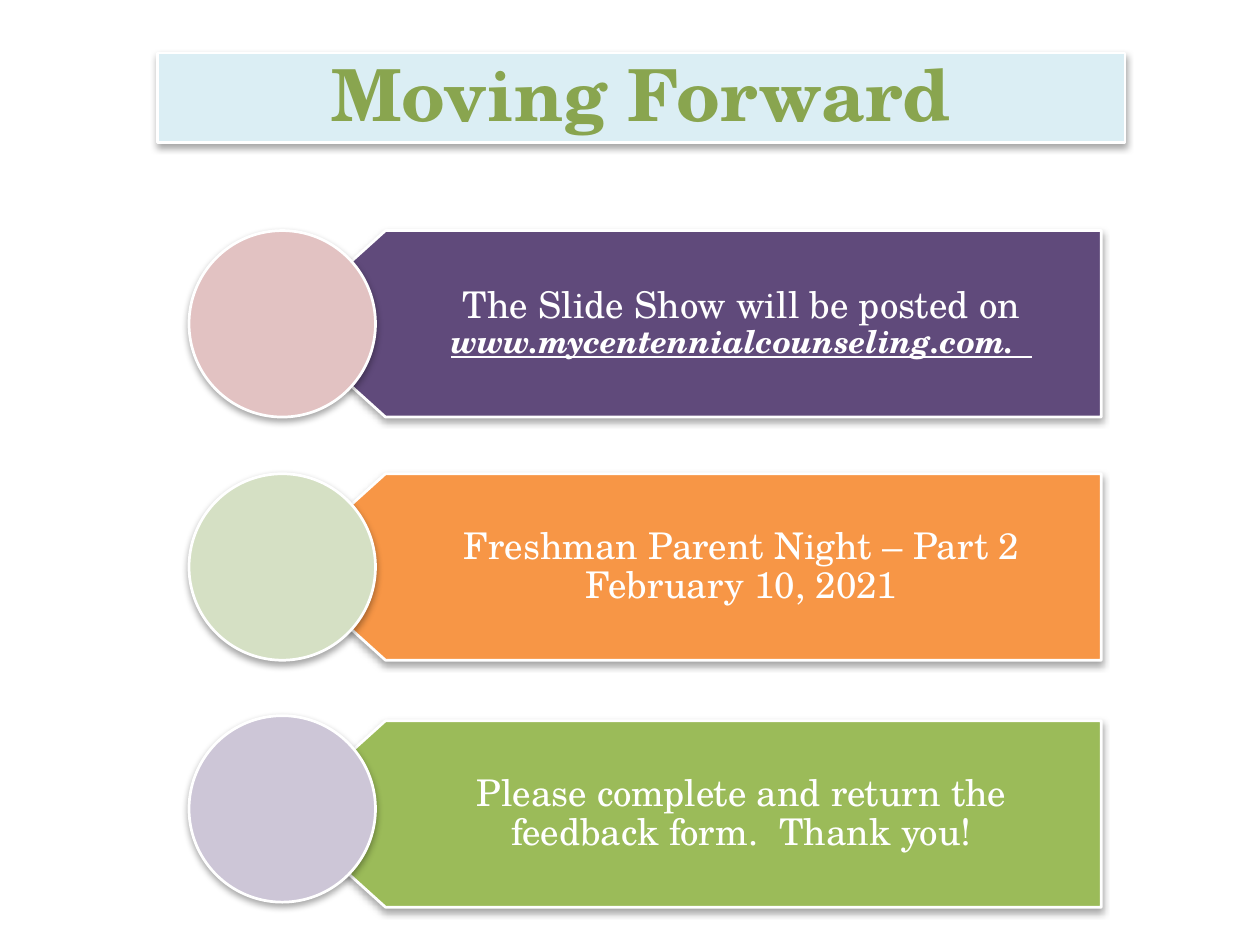
import dataclasses

import pptx
import pptx.dml.color
import pptx.enum.shapes
import pptx.enum.text
import pptx.oxml
import pptx.oxml.ns
import pptx.util

COLUMNS, ROWS = 100, 75
FONT = "TeX Gyre Schola"
WHITE = "FFFFFF"
BANNER_LEFT, BANNER_RIGHT = 22.4, 87.4
NOTCH = 8.2
ITEM_HEIGHT = 14.8
CIRCLE_LEFT = 15
SHADOW = (
    f'<a:effectLst {pptx.oxml.ns.nsdecls("a")}>'
    '<a:outerShdw blurRad="50800" dist="25400" dir="5400000" rotWithShape="0">'
    '<a:srgbClr val="000000"><a:alpha val="35000"/></a:srgbClr>'
    "</a:outerShdw></a:effectLst>"
)

presentation = pptx.Presentation()
presentation.slide_width = pptx.util.Inches(10)
presentation.slide_height = pptx.util.Inches(7.5)
slide = presentation.slides.add_slide(presentation.slide_layouts[6])


@dataclasses.dataclass(frozen=True)
class TextRun:
    text: str
    size: float = 21
    color: str = WHITE
    bold: bool = False
    italic: bool = False
    underline: bool = False


@dataclasses.dataclass(frozen=True)
class Item:
    banner_top: float
    circle_top: float
    banner_color: str
    circle_color: str
    runs: tuple[TextRun, ...]


ITEMS = (
    Item(18.3, 18.3, "604A7B", "E2C2C2", (
        TextRun("The Slide Show will be posted on "),
        TextRun("www.mycentennialcounseling.com.  ", 18,
                bold=True, italic=True, underline=True),
    )),
    Item(37.6, 37.6, "F79646", "D5E0C4", (
        TextRun("Freshman Parent Night – Part 2 February 10, 2021"),
    )),
    Item(57.2, 56.8, "9BBB59", "CDC6D7", (
        TextRun("Please complete and return the feedback form.  Thank you!"),
    )),
)


def across(columns: float) -> int:
    return round(presentation.slide_width * columns / COLUMNS)


def down(rows: float) -> int:
    return round(presentation.slide_height * rows / ROWS)


def rgb(color: str) -> pptx.dml.color.RGBColor:
    return pptx.dml.color.RGBColor.from_string(color)


def style(shape, color: str) -> None:
    shape.fill.solid()
    shape.fill.fore_color.rgb = rgb(color)
    shape.line.color.rgb = rgb(WHITE)
    shape.line.width = pptx.util.Pt(1.57)
    shape.shadow.inherit = False
    properties = shape.element.spPr
    properties.replace(properties.find(pptx.oxml.ns.qn("a:effectLst")),
                       pptx.oxml.parse_xml(SHADOW))


def add_preset(kind, left: float, top: float, width: float, height: float,
               color: str):
    shape = slide.shapes.add_shape(
        kind, across(left), down(top), across(width), down(height))
    style(shape, color)
    return shape


def write(shape, runs: tuple[TextRun, ...], anchor, spacing: float) -> None:
    frame = shape.text_frame
    frame.word_wrap = True
    frame.vertical_anchor = anchor
    paragraph = frame.paragraphs[0]
    paragraph.alignment = pptx.enum.text.PP_ALIGN.CENTER
    paragraph.line_spacing = spacing
    for item in runs:
        run = paragraph.add_run()
        run.text = item.text
        run.font.name = FONT
        run.font.size = pptx.util.Pt(item.size)
        run.font.color.rgb = rgb(item.color)
        run.font.bold = item.bold
        run.font.italic = item.italic
        run.font.underline = item.underline


def add_item(item: Item) -> None:
    top, bottom = item.banner_top, item.banner_top + ITEM_HEIGHT
    shoulder = BANNER_LEFT + NOTCH
    corners = (
        (BANNER_RIGHT, bottom),
        (shoulder, bottom),
        (BANNER_LEFT, (top + bottom) / 2),
        (shoulder, top),
        (BANNER_RIGHT, top),
    )
    points = [(across(column), down(row)) for column, row in corners]
    builder = slide.shapes.build_freeform(*points[0])
    builder.add_line_segments(points[1:], close=True)
    banner = builder.convert_to_shape()
    style(banner, item.banner_color)
    frame = banner.text_frame
    frame.margin_left = across(10.2)
    frame.margin_right = across(2.3)
    frame.margin_top = frame.margin_bottom = down(1.2)
    write(banner, item.runs, pptx.enum.text.MSO_ANCHOR.MIDDLE, 0.9)
    add_preset(pptx.enum.shapes.MSO_SHAPE.OVAL, CIRCLE_LEFT, item.circle_top,
               ITEM_HEIGHT, ITEM_HEIGHT, item.circle_color)


def main() -> None:
    title = add_preset(pptx.enum.shapes.MSO_SHAPE.RECTANGLE,
                       12.5, 4.2, 76.8, 7.1, "DBEEF4")
    write(title, (TextRun("Moving Forward", 41, "89A54F", bold=True),),
          pptx.enum.text.MSO_ANCHOR.BOTTOM, 1.0)
    for item in ITEMS:
        add_item(item)
    presentation.save("out.pptx")


if __name__ == "__main__":
    main()
